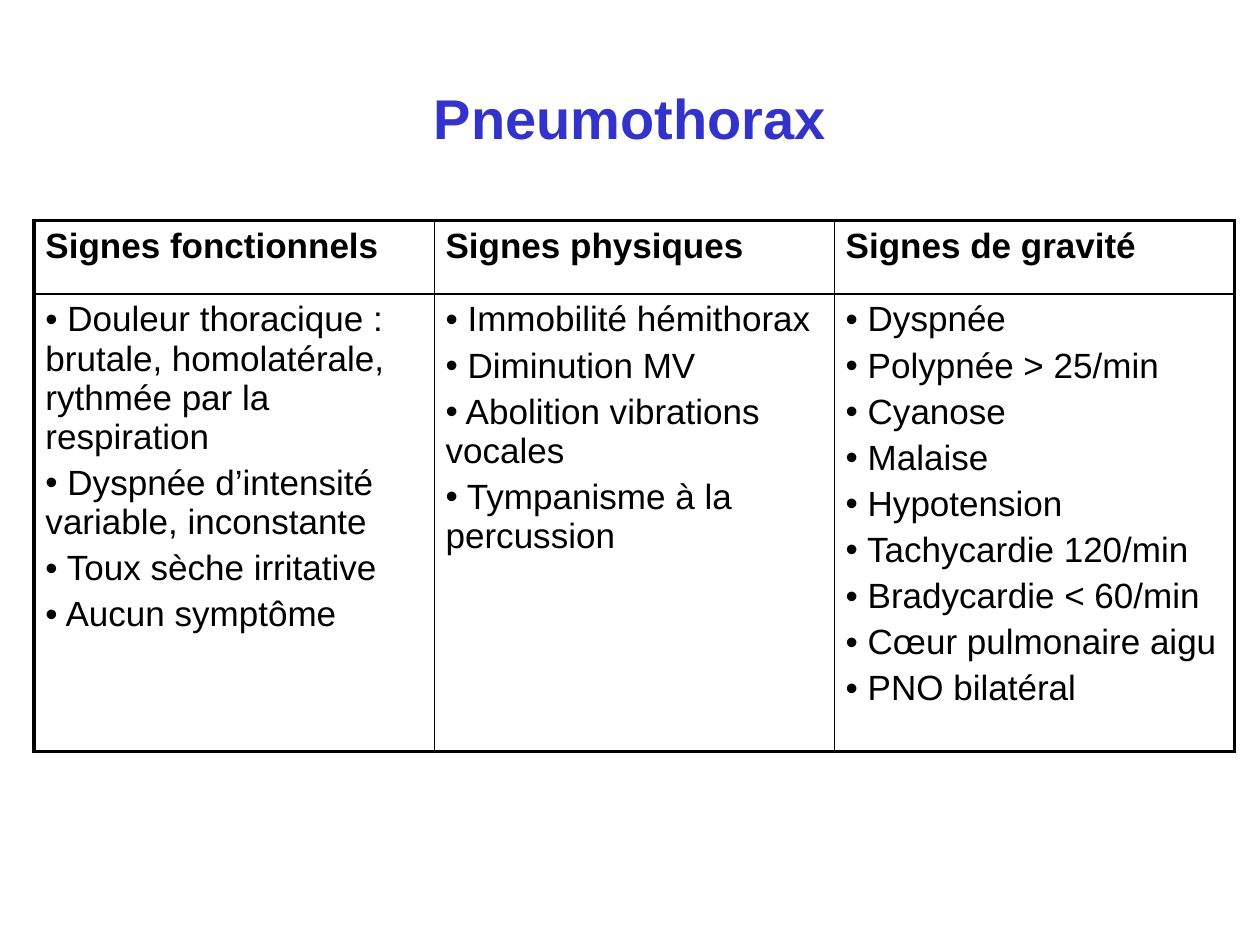
from lxml.etree import SubElement
from pptx import Presentation
from pptx.dml.color import RGBColor
from pptx.enum.text import MSO_ANCHOR, PP_ALIGN
from pptx.oxml import parse_xml
from pptx.oxml.ns import nsdecls, qn
from pptx.util import Pt

TITLE = "Pneumothorax"
COLUMNS = {
    "Signes fonctionnels": [
        "Douleur thoracique : brutale, homolatérale, rythmée par la respiration",
        "Dyspnée d’intensité variable, inconstante",
        "Toux sèche irritative",
        "Aucun symptôme",
    ],
    "Signes physiques": [
        "Immobilité hémithorax",
        "Diminution MV",
        "Abolition vibrations vocales",
        "Tympanisme à la percussion",
    ],
    "Signes de gravité": [
        "Dyspnée",
        "Polypnée > 25/min",
        "Cyanose",
        "Malaise",
        "Hypotension",
        "Tachycardie 120/min",
        "Bradycardie < 60/min",
        "Cœur pulmonaire aigu",
        "PNO bilatéral",
    ],
}
ROW_HEIGHTS = [42, 261.5]
OUTER, INNER = 2.25, 1


def color(value):
    return RGBColor.from_string(value)


def write(para, text, size, ink="000000", bold=False):
    span = para.add_run()
    span.text = text
    values = {"name": "Arial", "size": Pt(size), "bold": bold}
    for name, value in values.items():
        setattr(span.font, name, value)
    span.font.color.rgb = color(ink)


def add_bullet(para):
    props = para._p.get_or_add_pPr()
    SubElement(props, qn("a:buFont"), typeface="Arial")
    SubElement(props, qn("a:buChar"), char="•")


def set_borders(cell, widths):
    props = cell._tc.get_or_add_tcPr()
    for index, (side, width) in enumerate(widths.items()):
        props.insert(index, parse_xml(
            f'<a:ln{side} {nsdecls("a")} w="{Pt(width)}"><a:solidFill>'
            f'<a:srgbClr val="000000"/></a:solidFill></a:ln{side}>'))


def add_title(page, left, top, width, height):
    box = page.shapes.add_textbox(Pt(left), Pt(top), Pt(width), Pt(height))
    box.text_frame.word_wrap = True
    box.text_frame.vertical_anchor = MSO_ANCHOR.MIDDLE
    para = box.text_frame.paragraphs[0]
    para.alignment = PP_ALIGN.CENTER
    write(para, TITLE, 32, "3333CC", True)


def fill_cell(cell, lines, heading):
    margins = {"margin_left": 6.5, "margin_right": 6.5,
               "margin_top": 3.6, "margin_bottom": 3.6}
    for name, value in margins.items():
        setattr(cell, name, Pt(value))
    cell.fill.background()
    frame = cell.text_frame
    for index, line in enumerate(lines):
        para = frame.add_paragraph() if index else frame.paragraphs[0]
        para.space_before = Pt(4)
        if not heading:
            add_bullet(para)
        write(para, line if heading else " " + line, 20, bold=heading)


def add_signs_table(page, left, top, width, height):
    count = len(COLUMNS)
    table = page.shapes.add_table(2, count, Pt(left), Pt(top),
                                  Pt(width), Pt(height)).table
    table.first_row = table.horz_banding = False
    for row, row_height in zip(table.rows, ROW_HEIGHTS):
        row.height = Pt(row_height)
    for col, (heading, signs) in enumerate(COLUMNS.items()):
        table.columns[col].width = Pt(width / count)
        for row, lines in enumerate([[heading], signs]):
            cell = table.cell(row, col)
            fill_cell(cell, lines, heading=row == 0)
            # Thick frame outside, thin rules inside
            set_borders(cell, {
                "L": OUTER if col == 0 else INNER,
                "R": OUTER if col == count - 1 else INNER,
                "T": OUTER if row == 0 else INNER,
                "B": OUTER if row == 1 else INNER,
            })


def main():
    deck = Presentation()
    deck.slide_width, deck.slide_height = Pt(720), Pt(540)
    page = deck.slides.add_slide(deck.slide_layouts[6])
    page.background.fill.solid()
    page.background.fill.fore_color.rgb = color("FFFFFF")
    # Title
    add_title(page, 54, 36.75, 612, 60.5)
    # Table of signs
    add_signs_table(page, 19.5, 126, 686, sum(ROW_HEIGHTS))
    deck.save("out.pptx")


if __name__ == "__main__":
    main()
